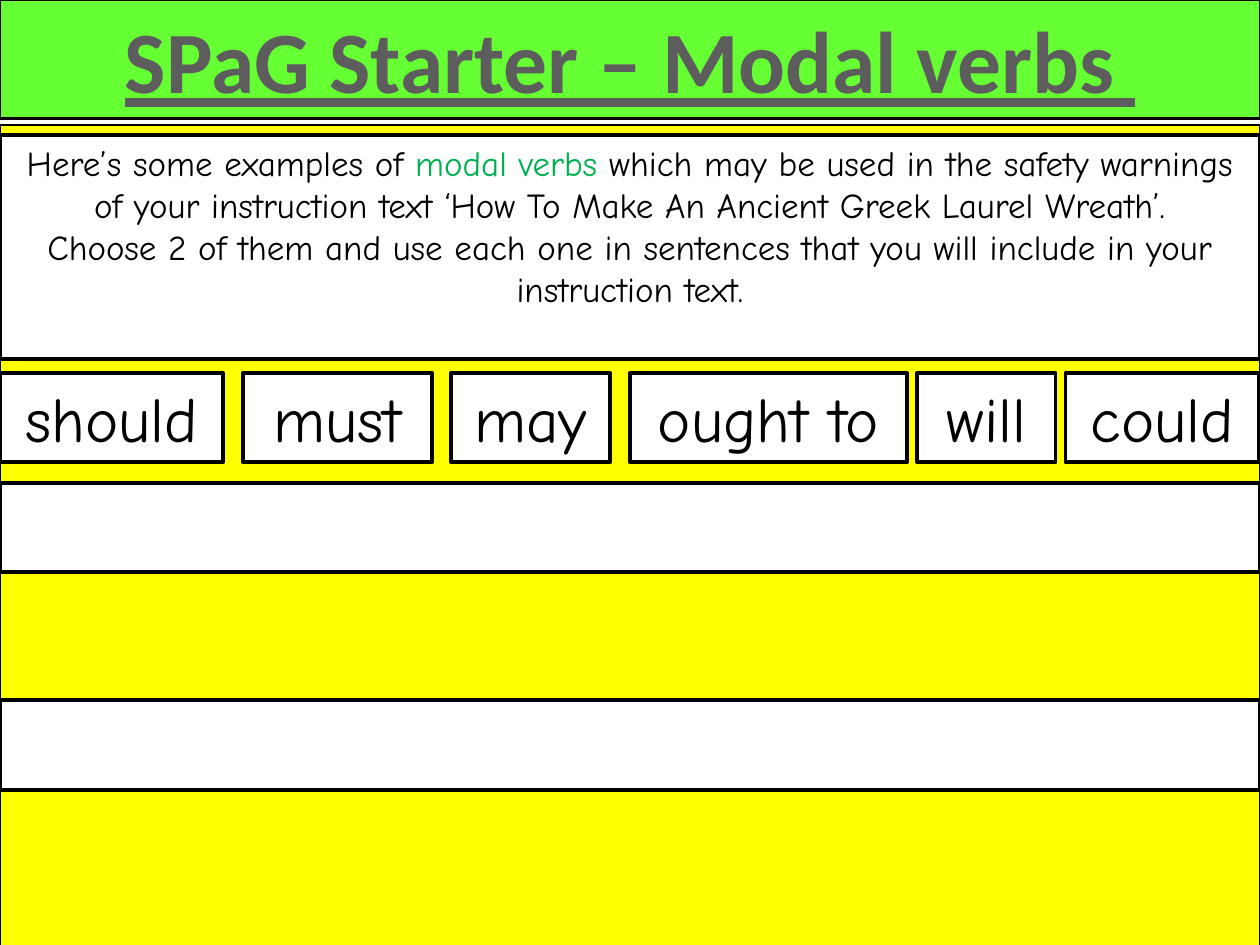
from pptx import Presentation
from pptx.dml.color import RGBColor
from pptx.enum.shapes import MSO_SHAPE as Shape
from pptx.enum.text import MSO_ANCHOR as Anchor, PP_ALIGN as Align
from pptx.util import Cm, Pt

COLOURS = {
    "green": "66FF33", "yellow": "FFFF00", "white": "FFFFFF",
    "black": "000000", "grey": "5D5D5D", "highlight": "00B050",
}
PAGE_WIDTH, PAGE_HEIGHT = 25.4, 19.05
BODY_FONT = "Comic Neue"

TITLE = "SPaG Starter – Modal verbs "
# Each paragraph is a list of (text, colour) spans.
INSTRUCTIONS = [
    [("Here’s some examples of ", "black"),
     ("modal verbs ", "highlight"),
     ("which may be used in the safety warnings of your instruction text "
      "‘How To Make An Ancient Greek Laurel Wreath’.", "black")],
    [("Choose 2 of them and use each one in sentences that you will include "
      "in your instruction text.", "black")],
]
# Word, box width, gap to the next box
MODAL_VERBS = [
    ("should", 4.5, 0.4), ("must", 3.81, 0.39), ("may", 3.2, 0.4),
    ("ought to", 5.59, 0.2), ("will", 2.79, 0.2), ("could", 3.91, 0),
]
VERB_TOP = 7.52
STRIP_HEIGHT = 1.8
ANSWER_TOPS = [9.73, 14.12]


def rgb(name):
    return RGBColor.from_string(COLOURS[name])


def add_box(page, left, top, width, height, fill="white", line=2.25):
    box = page.shapes.add_shape(
        Shape.RECTANGLE, Cm(left), Cm(top), Cm(width), Cm(height))
    box.shadow.inherit = False
    box.fill.solid()
    box.fill.fore_color.rgb = rgb(fill)
    box.line.color.rgb = rgb("black")
    box.line.width = Pt(line)
    return box


def write(box, paragraphs, size, font=BODY_FONT, bold=False, underline=False):
    frame = box.text_frame
    frame.word_wrap = True
    frame.vertical_anchor = Anchor.TOP
    for index, spans in enumerate(paragraphs):
        para = frame.add_paragraph() if index else frame.paragraphs[0]
        para.alignment = Align.CENTER
        for text, colour in spans:
            span = para.add_run()
            span.text = text
            span.font.name = font
            span.font.size = Pt(size)
            span.font.bold = bold
            span.font.underline = underline
            span.font.color.rgb = rgb(colour)


def main():
    deck = Presentation()
    deck.slide_width, deck.slide_height = Cm(PAGE_WIDTH), Cm(PAGE_HEIGHT)
    page = deck.slides.add_slide(deck.slide_layouts[6])

    banner = add_box(page, 0, 0, PAGE_WIDTH, 2.39, "green", 1.5)
    write(banner, [[(TITLE, "grey")]], 50, "Calibri", bold=True, underline=True)

    add_box(page, 0, 2.52, PAGE_WIDTH, 16.66, "yellow", 0.75)
    instructions = add_box(page, 0, 2.72, PAGE_WIDTH, 4.52)
    write(instructions, INSTRUCTIONS, 20)

    left = 0
    for word, width, gap in MODAL_VERBS:
        card = add_box(page, left, VERB_TOP, width, STRIP_HEIGHT)
        write(card, [[(word, "black")]], 36)
        left += width + gap

    for top in ANSWER_TOPS:
        add_box(page, 0, top, PAGE_WIDTH, STRIP_HEIGHT)

    deck.save("out.pptx")


if __name__ == "__main__":
    main()
